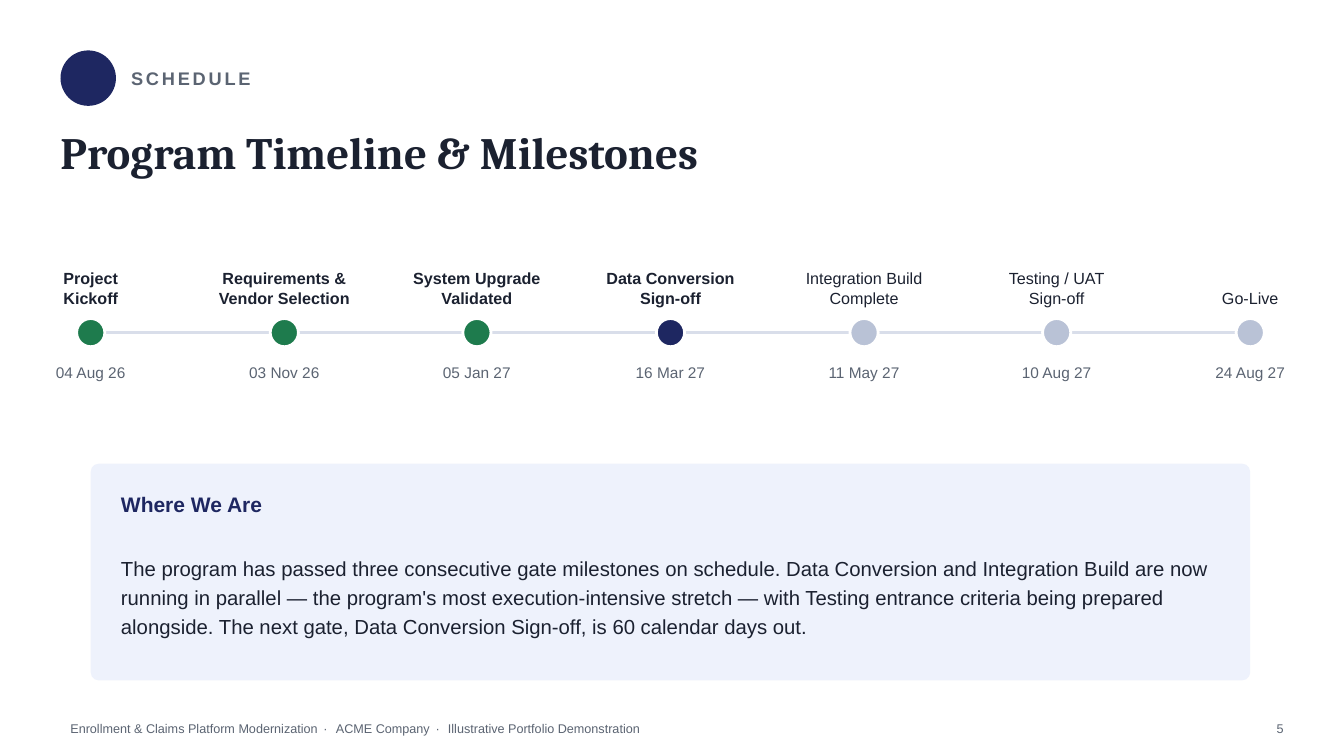
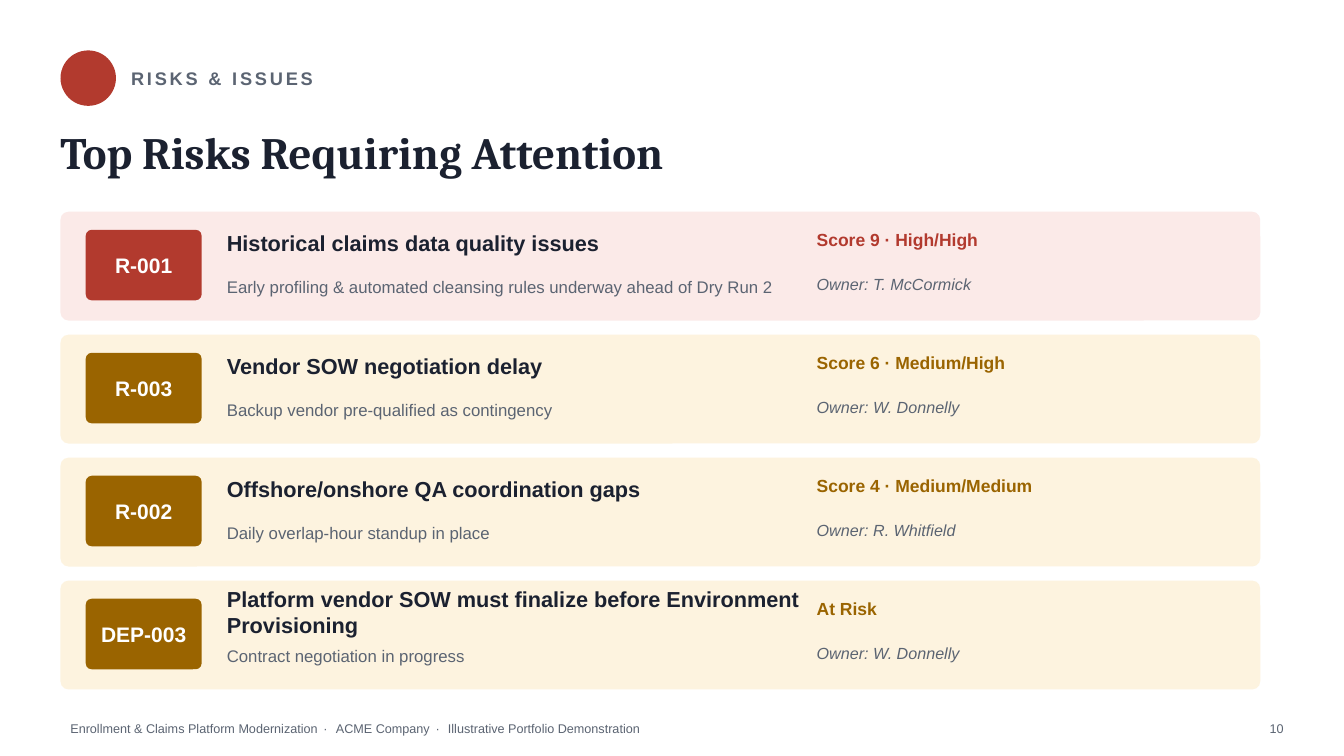
from pptx import Presentation
from pptx.dml.color import RGBColor as RGB
from pptx.enum.shapes import MSO_CONNECTOR as Conn, MSO_SHAPE as Geo
from pptx.enum.text import MSO_ANCHOR as Anc, MSO_AUTO_SIZE as Fit, PP_ALIGN as Al
from pptx.oxml import parse_xml
from pptx.oxml.ns import nsdecls
from pptx.util import Emu, Pt

HUE = {
    "white": "FFFFFF", "ink": "1B2130", "grey": "5B6472", "navy": "1E2761",
    "green": "1E7B4D", "mist": "B9C2D6", "rule": "D9DEEA", "ice": "EEF2FC",
    "red": "B23A2E", "rose": "FBEAE8", "gold": "9A6400", "cream": "FDF3DF",
}
SANS, SERIF = "Arial", "Cambria"
FOOT = ["Enrollment & Claims Platform Modernization", "ACME Company",
        "Illustrative Portfolio Demonstration"]


def px(n):
    """One px is a hundredth of an inch."""
    return Emu(round(n) * 9144)


def hue(name):
    return RGB.from_string(HUE[name])


class Deck:
    """Holds the style and the current slide."""

    def __init__(self):
        self.prs = Presentation()
        self.prs.slide_width, self.prs.slide_height = px(1333), px(750)
        self.slide = None

    # Text
    def run(self, par, text, size, color="ink", bold=False, ital=False,
            font=SANS, gap=0):
        run = par.add_run()
        run.text = text
        face = run.font
        face.name, face.size = font, Pt(size)
        face.bold, face.italic = bold, ital
        face.color.rgb = hue(color)
        if gap:
            run._r.get_or_add_rPr().set("spc", str(round(gap * 100)))

    def frame(self, shape, anchor=Anc.MIDDLE, pad=(0, 0)):
        frame = shape.text_frame
        frame.word_wrap, frame.auto_size = True, Fit.NONE
        frame.vertical_anchor = anchor
        frame.margin_left = frame.margin_right = px(pad[0])
        frame.margin_top = frame.margin_bottom = px(pad[1])
        return frame

    def text(self, box, lines, size, color="ink", align=Al.LEFT,
             anchor=Anc.MIDDLE, pad=(0, 0), space=None, **look):
        shape = self.slide.shapes.add_textbox(*map(px, box))
        frame = self.frame(shape, anchor, pad)
        for i, line in enumerate(lines):
            par = frame.add_paragraph() if i else frame.paragraphs[0]
            par.alignment = align
            if space:
                par.line_spacing = space
            self.run(par, line, size, color, **look)
        return frame

    # Shapes
    def form(self, geo, box, fill, edge=None):
        shape = self.slide.shapes.add_shape(geo, *map(px, box))
        shape.shadow.inherit = False
        shape.fill.solid()
        shape.fill.fore_color.rgb = hue(fill)
        if edge:
            shape.line.color.rgb, shape.line.width = hue(edge), Pt(2)
        else:
            shape.line.fill.background()
        return shape

    def dot(self, box, fill, edge=None):
        return self.form(Geo.OVAL, box, fill, edge)

    def card(self, box, fill, curve=8):
        shape = self.form(Geo.ROUNDED_RECTANGLE, box, fill)
        shape.adjustments[0] = curve / min(box[2:])
        return shape

    def badge(self, box, text, fill):
        par = self.frame(self.card(box, fill, 6)).paragraphs[0]
        par.alignment = Al.CENTER
        self.run(par, text, 15, "white", bold=True)

    def line(self, x1, y1, x2, y2, color, width):
        line = self.slide.shapes.add_connector(
            Conn.STRAIGHT, px(x1), px(y1), px(x2), px(y2))
        line.line.color.rgb, line.line.width = hue(color), Pt(width)
        line._element.spPr.append(
            parse_xml("<a:effectLst %s/>" % nsdecls("a")))

    # Parts of every slide
    def page(self, label, title, color, num):
        self.slide = self.prs.slides.add_slide(self.prs.slide_layouts[5])
        head = self.slide.shapes.title
        head.left, head.top, head.width, head.height = map(
            px, (60, 115, 1050, 70))
        par = self.frame(head).paragraphs[0]
        par.alignment = Al.LEFT
        self.run(par, title, 32, bold=True, font=SERIF)
        self.dot((60, 50, 55, 55), color)
        self.text((130, 50, 800, 55), [label], 13, "grey", bold=True, gap=2)
        self.foot(num)

    def foot(self, num):
        pad = (10, 5)
        frame = self.text((60, 708, 950, 30), FOOT[:1], 9, "grey", pad=pad)
        for part in FOOT[1:]:
            self.run(frame.paragraphs[0], " · ", 9, "grey", gap=1.67)
            self.run(frame.paragraphs[0], part, 9, "grey")
        self.text((1233, 708, 50, 30), [str(num)], 9, "grey", Al.RIGHT,
                  pad=pad)


STEPS = [
    (["Project", "Kickoff"], "04 Aug 26", "green"),
    (["Requirements &", "Vendor Selection"], "03 Nov 26", "green"),
    (["System Upgrade", "Validated"], "05 Jan 27", "green"),
    (["Data Conversion", "Sign-off"], "16 Mar 27", "navy"),
    (["Integration Build", "Complete"], "11 May 27", "mist"),
    (["Testing / UAT", "Sign-off"], "10 Aug 27", "mist"),
    (["Go-Live"], "24 Aug 27", "mist"),
]
STATUS = (
    "The program has passed three consecutive gate milestones on schedule. "
    "Data Conversion and Integration Build are now running in parallel — the "
    "program's most execution-intensive stretch — with Testing entrance "
    "criteria being prepared alongside. The next gate, Data Conversion "
    "Sign-off, is 60 calendar days out.")
RISKS = [
    ("R-001", "Historical claims data quality issues",
     "Early profiling & automated cleansing rules underway ahead of Dry Run 2",
     "Score 9 · High/High", "T. McCormick", "red", "rose"),
    ("R-003", "Vendor SOW negotiation delay",
     "Backup vendor pre-qualified as contingency",
     "Score 6 · Medium/High", "W. Donnelly", "gold", "cream"),
    ("R-002", "Offshore/onshore QA coordination gaps",
     "Daily overlap-hour standup in place",
     "Score 4 · Medium/Medium", "R. Whitfield", "gold", "cream"),
    ("DEP-003",
     "Platform vendor SOW must finalize before Environment Provisioning",
     "Contract negotiation in progress",
     "At Risk", "W. Donnelly", "gold", "cream"),
]


def plan(deck):
    deck.page("SCHEDULE", "Program Timeline & Milestones", "navy", 5)
    # Milestones at equal steps along the rule
    left, right, mid = 90, 1240, 330
    deck.line(left, mid, right, mid, "rule", 2.5)
    for i, (name, date, color) in enumerate(STEPS):
        x = left + i * (right - left) / (len(STEPS) - 1)
        deck.dot((x - 14, mid - 14, 28, 28), color, "white")
        deck.text((x - 75, 220, 150, 85), name, 11.5, align=Al.CENTER,
                  anchor=Anc.BOTTOM, bold=color != "mist")
        deck.text((x - 75, 352, 150, 35), [date], 11, "grey", Al.CENTER)
    # Status card
    deck.card((left, 460, right - left, 215), "ice")
    deck.text((120, 480, 600, 40), ["Where We Are"], 15, "navy", bold=True)
    deck.text((120, 520, 1090, 140), [STATUS], 14.5, space=1.2)


def risks(deck):
    deck.page("RISKS & ISSUES", "Top Risks Requiring Attention", "red", 10)
    # One card per risk
    for i, (code, name, plan, score, owner, color, tint) in enumerate(RISKS):
        y = 210 + i * 122
        deck.card((60, y, 1190, 108), tint)
        deck.badge((85, y + 18, 115, 70), code, color)
        deck.text((225, y + 8, 570, 45), [name], 15.5, bold=True)
        deck.text((225, y + 52, 570, 45), [plan], 12, "grey")
        deck.text((810, y + 8, 215, 40), [score], 12.5, color, bold=True)
        deck.text((810, y + 52, 215, 40), ["Owner: " + owner], 11.5, "grey",
                  ital=True)


def main():
    deck = Deck()
    plan(deck)
    risks(deck)
    deck.prs.save("out.pptx")


if __name__ == "__main__":
    main()
